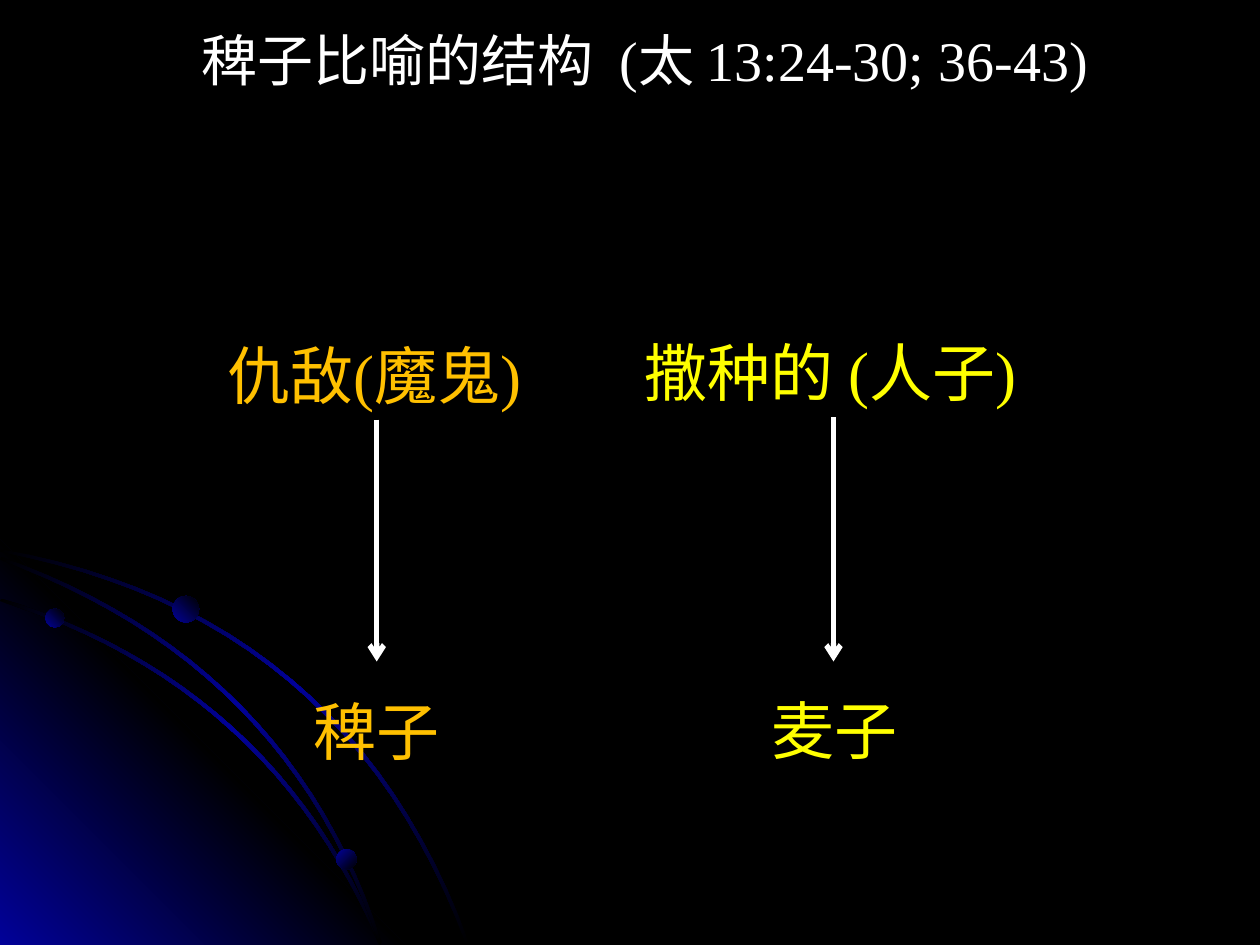
"""Build the slide on the structure of the parable of the weeds."""
import pptx
import pptx.util
import pptx.dml.color
import pptx.enum.shapes
import pptx.enum.text
import pptx.oxml

Inches, Pt = pptx.util.Inches, pptx.util.Pt
RGB = pptx.dml.color.RGBColor.from_string
ALIGN = pptx.enum.text.PP_ALIGN
NS = 'xmlns:a="http://schemas.openxmlformats.org/drawingml/2006/main"'
FONT = "Times New Roman"
COLORS = {"black": "000000", "blue": "010199", "white": "FFFFFF",
          "yellow": "FFFF00", "gold": "FFC000"}
SLIDE_WIDTH, SLIDE_HEIGHT = 10, 7.5

TITLE = {"text": "稗子比喻的结构  (太 13:24-30; 36-43)", "left": 0.83, "top": 0.21, "width": 8.58}
CHAINS = [
    {"color": "yellow",
     "sower": {"text": "撒种的 (人子)", "left": 5.02, "top": 2.6, "width": 3.19},
     "crop": {"text": "麦子", "left": 6.02, "top": 5.44, "width": 1.21}},
    {"color": "gold",
     "sower": {"text": "仇敌(魔鬼)", "left": 1.71, "top": 2.62, "width": 2.56},
     "crop": {"text": "稗子", "left": 2.38, "top": 5.45, "width": 1.21}},
]
BOX_HEIGHT, ARROW_END = 0.71, 5.25
TITLE_SIZE, LABEL_SIZE = 32, 36

ORBITS = {
    "outer": {"start": (0, 4.37), "bend": (2.75, 4.87), "end": (3.71, 7.49)},
    "inner": {"start": (0, 4.76), "bend": (2.16, 5.43), "end": (3.02, 7.49)},
    "middle": {"start": (0, 4.43), "bend": (2.3, 5.26), "end": (3.02, 7.49)},
}
ORBIT_STEPS, ORBIT_HALF_WIDTH = 24, 0.01
CORNER_SIZE = 3.22
PLANETS = [
    {"left": 0.36, "top": 4.83, "size": 0.15, "angle": 315},
    {"left": 2.67, "top": 6.74, "size": 0.16, "angle": 45},
    {"left": 1.37, "top": 4.73, "size": 0.21, "angle": 315},
]
UNITS_PER_INCH = 1000


def shade(shape, stops, angle):
    """Give a shape an evenly spaced linear gradient, without line or shadow."""
    shape.shadow.inherit = False
    shape.line.fill.background()
    shape.fill.background()
    gs = "".join(
        f'<a:gs pos="{100000 * i // (len(stops) - 1)}"><a:srgbClr val="{COLORS[name]}"/></a:gs>'
        for i, name in enumerate(stops))
    grad = pptx.oxml.parse_xml(
        f'<a:gradFill {NS} rotWithShape="1"><a:gsLst>{gs}</a:gsLst>'
        f'<a:lin ang="{angle * 60000}" scaled="1"/></a:gradFill>')
    sp_pr = shape._element.spPr
    sp_pr.replace(sp_pr.find(pptx.oxml.ns.qn("a:noFill")), grad)


def curve_point(start, bend, end, t):
    """Return the point at t, from 0 to 1, on a quadratic Bezier curve."""
    return tuple((1 - t) ** 2 * a + 2 * t * (1 - t) * b + t ** 2 * c
                 for a, b, c in zip(start, bend, end))


def orbit_outline(start, bend, end):
    """Return a thin band around a curve, kept inside the slide."""
    center = [curve_point(start, bend, end, i / ORBIT_STEPS) for i in range(ORBIT_STEPS + 1)]

    def edge(offset):
        """Return the curve moved diagonally by an offset."""
        return [(max(x + offset, 0), min(y - offset, SLIDE_HEIGHT)) for x, y in center]

    return edge(ORBIT_HALF_WIDTH) + edge(-ORBIT_HALF_WIDTH)[::-1]


def add_outline(shapes, points):
    """Add a closed freeform through points given in inches."""
    first, *rest = [(x * UNITS_PER_INCH, y * UNITS_PER_INCH) for x, y in points]
    builder = shapes.build_freeform(*first, scale=Inches(1) / UNITS_PER_INCH)
    builder.add_line_segments(rest, close=True)
    return builder.convert_to_shape()


def add_backdrop(s):
    """Add the glowing corner with its orbits and planets."""
    shapes = s.shapes.add_group_shape().shapes
    corner = [(0, SLIDE_HEIGHT - CORNER_SIZE), (0, SLIDE_HEIGHT), (CORNER_SIZE, SLIDE_HEIGHT)]
    shade(add_outline(shapes, corner), ["blue", "black", "blue"], 315)
    for orbit in ORBITS.values():
        shade(add_outline(shapes, orbit_outline(**orbit)), ["black", "blue", "black"], 45)
    for planet in PLANETS:
        size = Inches(planet["size"])
        sp = shapes.add_shape(pptx.enum.shapes.MSO_SHAPE.OVAL, Inches(planet["left"]),
                              Inches(planet["top"]), size, size)
        shade(sp, ["blue", "black"], planet["angle"])


def frame(label):
    """Return left, top, width and height of a label as lengths."""
    return [Inches(v) for v in (label["left"], label["top"], label["width"], BOX_HEIGHT)]


def write(tf, text, size, color, align):
    """Write one run into a text frame and return its paragraph."""
    tf.word_wrap = True
    tf.vertical_anchor = pptx.enum.text.MSO_ANCHOR.TOP
    p = tf.paragraphs[0]
    p.alignment = align
    r = p.add_run()
    r.text = text
    r.font.name, r.font.size = FONT, Pt(size)
    r.font.color.rgb = RGB(COLORS[color])
    return p


def add_title(s):
    """Place and fill the title placeholder."""
    title = s.shapes.title
    title.left, title.top, title.width, title.height = frame(TITLE)
    p = write(title.text_frame, TITLE["text"], TITLE_SIZE, "white", ALIGN.CENTER)
    p.line_spacing, p.space_before = 0.9, Pt(0.2 * TITLE_SIZE)


def add_label(s, label, color, align):
    """Add a text box for one label."""
    box = s.shapes.add_textbox(*frame(label))
    write(box.text_frame, label["text"], LABEL_SIZE, color, align)
    return box


def add_arrow(s, box):
    """Add a downward arrow from the bottom of a box."""
    x = box.left + box.width // 2
    arrow = s.shapes.add_connector(pptx.enum.shapes.MSO_CONNECTOR.STRAIGHT,
                                   x, box.top + box.height, x, Inches(ARROW_END))
    arrow.begin_connect(box, 2)
    arrow.line.color.rgb = RGB(COLORS["white"])
    arrow.line.width = Pt(3)
    arrow.line._get_or_add_ln().append(pptx.oxml.parse_xml(f'<a:tailEnd {NS} type="arrow"/>'))
    arrow._element.spPr.append(pptx.oxml.parse_xml(f"<a:effectLst {NS}/>"))


def main():
    """Build and save the presentation."""
    prs = pptx.Presentation()
    prs.slide_width, prs.slide_height = Inches(SLIDE_WIDTH), Inches(SLIDE_HEIGHT)
    s = prs.slides.add_slide(prs.slide_layouts[5])
    s.background.fill.solid()
    s.background.fill.fore_color.rgb = RGB(COLORS["black"])
    add_backdrop(s)
    add_title(s)
    for chain in CHAINS:
        box = add_label(s, chain["sower"], chain["color"], ALIGN.LEFT)
        add_label(s, chain["crop"], chain["color"], ALIGN.CENTER)
        add_arrow(s, box)
    prs.save("out.pptx")


if __name__ == "__main__":
    main()
